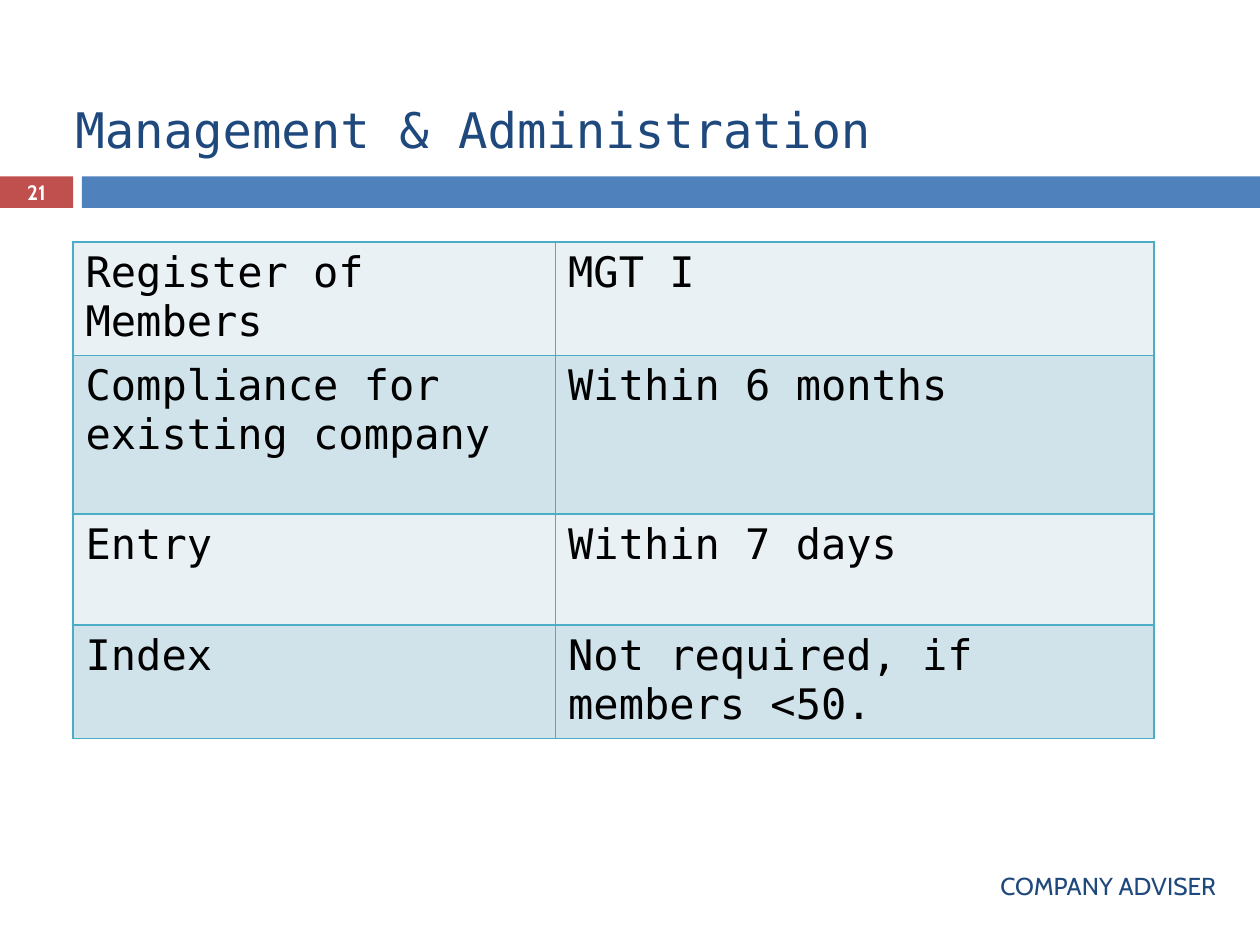
from lxml.etree import SubElement
from pptx import Presentation
from pptx.dml.color import RGBColor
from pptx.enum.shapes import MSO_SHAPE
from pptx.enum.text import MSO_ANCHOR, PP_ALIGN
from pptx.oxml.ns import qn
from pptx.util import Inches, Pt

NAVY = RGBColor(0x1F, 0x49, 0x7D)
BLUE = RGBColor(0x4F, 0x81, 0xBD)
RED = RGBColor(0xC0, 0x50, 0x4D)
TEAL = RGBColor(0x4B, 0xAC, 0xC6)
WHITE = RGBColor(0xFF, 0xFF, 0xFF)
BLACK = RGBColor(0, 0, 0)
BANDS = (RGBColor(0xE9, 0xF1, 0xF5), RGBColor(0xD0, 0xE3, 0xEA))

MONO, SANS = "DejaVu Sans Mono", "Cabin"
TITLE_FONT = {"name": MONO, "size": Pt(28)}
NUMBER_FONT = {"name": SANS, "size": Pt(11.9), "bold": True}
FOOTER_FONT = {"name": SANS, "size": Pt(14)}
CELL_FONT = {"name": MONO, "size": Pt(24)}

WIDTH, HEIGHT = 10, 7.5
REGISTER = (
    ("Register of Members", "MGT I"),
    ("Compliance for existing company", "Within 6 months"),
    ("Entry", "Within 7 days"),
    ("Index", "Not required, if members <50."),
)
COLUMN_SHARES = (3.83 / 8.58, 4.75 / 8.58)
ROW_SHARES = (0.88 / 3.9, 1.26 / 3.9, 0.88 / 3.9, 0.88 / 3.9)


def write(frame, text, font, color, align=PP_ALIGN.LEFT):
    paragraph = frame.paragraphs[0]
    paragraph.alignment = align
    run = paragraph.add_run()
    run.text = text
    for key, value in font.items():
        setattr(run.font, key, value)
    run.font.color.rgb = color


def add_label(slide, box, *text_style):
    frame = slide.shapes.add_textbox(*map(Inches, box)).text_frame
    frame.word_wrap = True
    frame.vertical_anchor = MSO_ANCHOR.MIDDLE
    write(frame, *text_style)


def add_bar(slide, box, color):
    bar = slide.shapes.add_shape(MSO_SHAPE.RECTANGLE, *map(Inches, box))
    bar.shadow.inherit = False
    bar.fill.solid()
    bar.fill.fore_color.rgb = color
    bar.line.fill.background()


def add_number_band(slide, box, number):
    """Red number block, a small gap, then the blue band."""
    left, top, width, height = box
    block, gap = 0.058 * width, 0.007 * width
    band_left = left + block + gap
    add_bar(slide, (left, top, block, height), RED)
    add_bar(slide, (band_left, top, left + width - band_left, height), BLUE)
    add_label(slide, (left, top, block, height), number, NUMBER_FONT, WHITE,
              PP_ALIGN.CENTER)


def outline_cell(cell):
    properties = cell._tc.get_or_add_tcPr()
    for position, side in enumerate(("a:lnL", "a:lnR", "a:lnT", "a:lnB")):
        line = SubElement(properties, qn(side), w=str(Pt(1)))
        fill = SubElement(line, qn("a:solidFill"))
        SubElement(fill, qn("a:srgbClr"), val=str(TEAL))
        properties.insert(position, line)  # borders come before the fill


def add_register(slide, box, rows):
    left, top, width, height = box
    table = slide.shapes.add_table(len(rows), len(rows[0]),
                                   *map(Inches, box)).table
    table.first_row = table.horz_banding = False
    for column, share in zip(table.columns, COLUMN_SHARES):
        column.width = Inches(width * share)
    for r, (row, share) in enumerate(zip(rows, ROW_SHARES)):
        table.rows[r].height = Inches(height * share)
        for c, text in enumerate(row):
            cell = table.cell(r, c)
            cell.fill.solid()
            cell.fill.fore_color.rgb = BANDS[r % 2]
            outline_cell(cell)
            write(cell.text_frame, text, CELL_FONT, BLACK)


def main():
    deck = Presentation()
    deck.slide_width, deck.slide_height = Inches(WIDTH), Inches(HEIGHT)
    slide = deck.slides.add_slide(deck.slide_layouts[6])

    # Heading and numbered band
    add_label(slide, (0.5, 0.5, 0.9 * WIDTH, 1.05),
              "Management & Administration", TITLE_FONT, NAVY)
    add_number_band(slide, (0, 1.4, WIDTH, 0.25), "21")

    # Register table
    add_register(slide, (0.58, 1.92, 8.58, 3.9), REGISTER)

    # Footer
    add_label(slide, (0.67, 6.83, 9.08, 0.4), "COMPANY ADVISER", FOOTER_FONT,
              NAVY, PP_ALIGN.RIGHT)

    deck.save("out.pptx")


if __name__ == "__main__":
    main()
